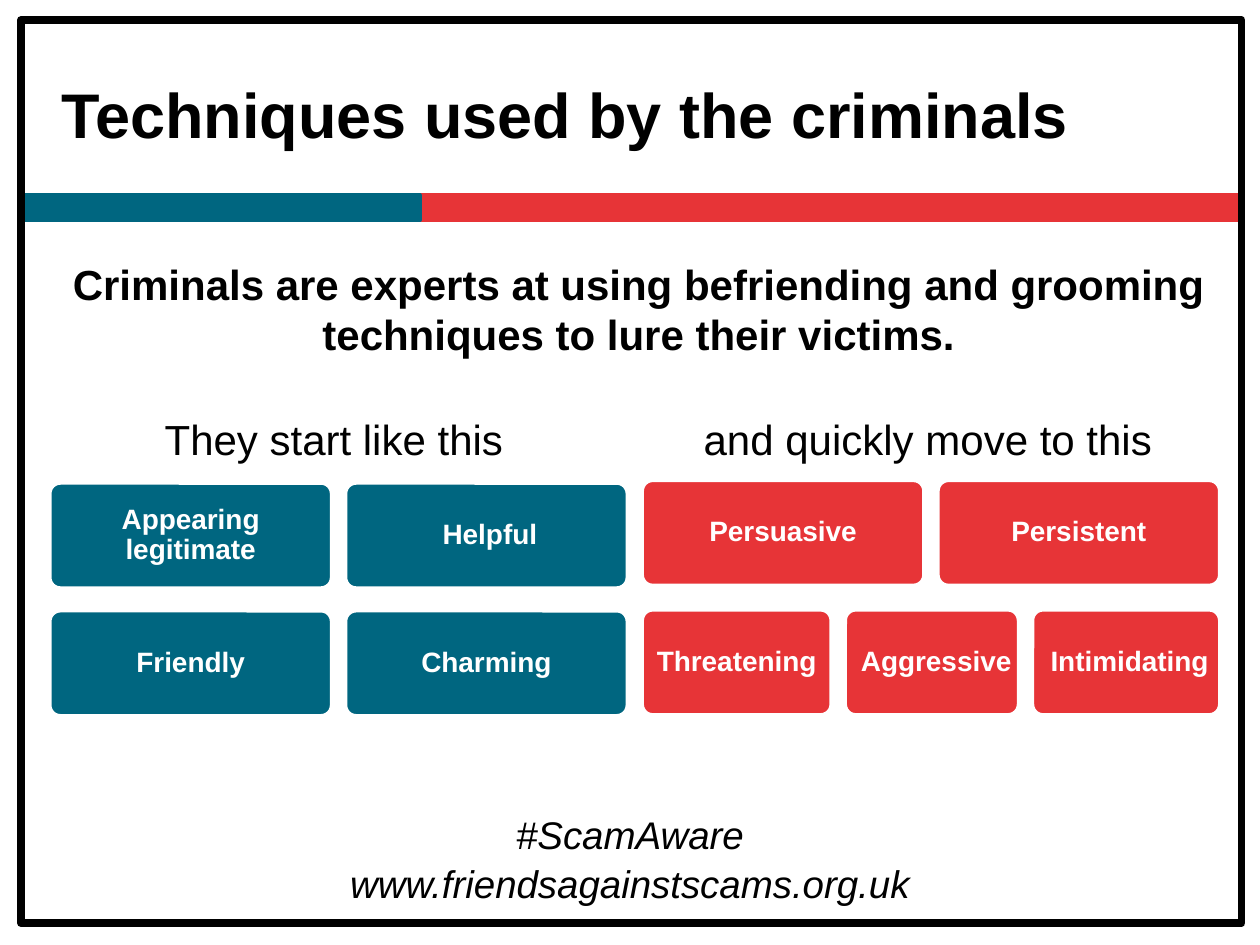
import pptx
import pptx.util
import pptx.dml.color
import pptx.enum.shapes
import pptx.enum.text

Pt = pptx.util.Pt
KIND = pptx.enum.shapes.MSO_SHAPE
SIDE = pptx.enum.text.PP_ALIGN
MID = pptx.enum.text.MSO_ANCHOR.MIDDLE
TEAL, RED, BLACK, WHITE = "006680", "E73437", "000000", "FFFFFF"


def tint(code):
    return pptx.dml.color.RGBColor.from_string(code)


def write(frame, words, size, color=BLACK, bold=False, slant=False, side=SIDE.CENTER):
    frame.word_wrap = True
    frame.text = words
    for para in frame.paragraphs:
        para.alignment = side
        for run in para.runs:
            font = run.font
            font.name, font.size = "Arial", Pt(size)
            font.bold, font.italic = bold, slant
            font.color.rgb = tint(color)


def label(slide, box, words, size, **style):
    area = slide.shapes.add_textbox(*map(Pt, box))
    write(area.text_frame, words, size, **style)


def block(slide, kind, box, fill, edge, width):
    shape = slide.shapes.add_shape(kind, *map(Pt, box))
    shape.shadow.inherit = False
    if fill:
        shape.fill.solid()
        shape.fill.fore_color.rgb = tint(fill)
    else:
        shape.fill.background()
    shape.line.color.rgb = tint(edge)
    shape.line.width = Pt(width)
    return shape


def frame(slide, box):
    left, top, width, height = box
    bar = top + 100
    block(slide, KIND.RECTANGLE, (left + 18, bar, width - 18, 14.4), RED, RED, 2)
    block(slide, KIND.RECTANGLE, (left, bar, 228, 14.4), TEAL, TEAL, 2)
    block(slide, KIND.RECTANGLE, box, None, BLACK, 4.5)


def title(slide, box, words):
    shape = slide.shapes.title
    shape.left, shape.top, shape.width, shape.height = map(Pt, box)
    write(shape.text_frame, words, 36, bold=True, side=SIDE.LEFT)
    shape.text_frame.vertical_anchor = MID


def cards(slide, box, color, items):
    left, top, gap, height = box
    for words, width, shift in items:
        card = block(slide, KIND.ROUNDED_RECTANGLE, (left, top, width, height), color, WHITE, 2)
        card.adjustments[0] = 0.1
        text = card.text_frame
        write(text, words, 16, WHITE, bold=True)
        text.vertical_anchor = MID
        text.margin_left, text.margin_right = Pt(3 + shift), Pt(3 - shift)
        text.paragraphs[0].line_spacing = 0.9
        left += width + gap


def foot(slide, box, lines):
    left, top, width, height = box
    for row, words in enumerate(lines):
        label(slide, (left, top + row * height, width, height), words, 22, slant=True)


def main():
    deck = pptx.Presentation()
    deck.slide_width, deck.slide_height = Pt(720), Pt(540)
    slide = deck.slides.add_slide(deck.slide_layouts[5])

    frame(slide, (12, 11.5, 697.5, 516))
    title(slide, (28, 39.5, 670, 50), "Techniques used by the criminals")
    label(slide, (26, 144, 678, 60),
          "Criminals are experts at using befriending and grooming techniques to lure their victims.",
          24, bold=True)
    label(slide, (87, 232.5, 215, 36), "They start like this", 24, side=SIDE.LEFT)
    label(slide, (395, 232.5, 276, 36), "and quickly move to this", 24, side=SIDE.LEFT)

    cards(slide, (28.5, 276, 8, 60), TEAL,
          [("Appearing legitimate", 161, 0), ("Helpful", 161, 2)])
    cards(slide, (28.5, 349, 8, 60), TEAL,
          [("Friendly", 161, 0), ("Charming", 161, 0)])
    cards(slide, (367, 274.5, 8, 60), RED,
          [("Persuasive", 161, 0), ("Persistent", 161, 0)])
    cards(slide, (367, 348.5, 8, 60), RED,
          [("Threatening", 108, 0), ("Aggressive", 99, 2.5), ("Intimidating", 107, 2)])

    foot(slide, (0, 460, 720, 28), ["#ScamAware", "www.friendsagainstscams.org.uk"])
    deck.save("out.pptx")


if __name__ == "__main__":
    main()
